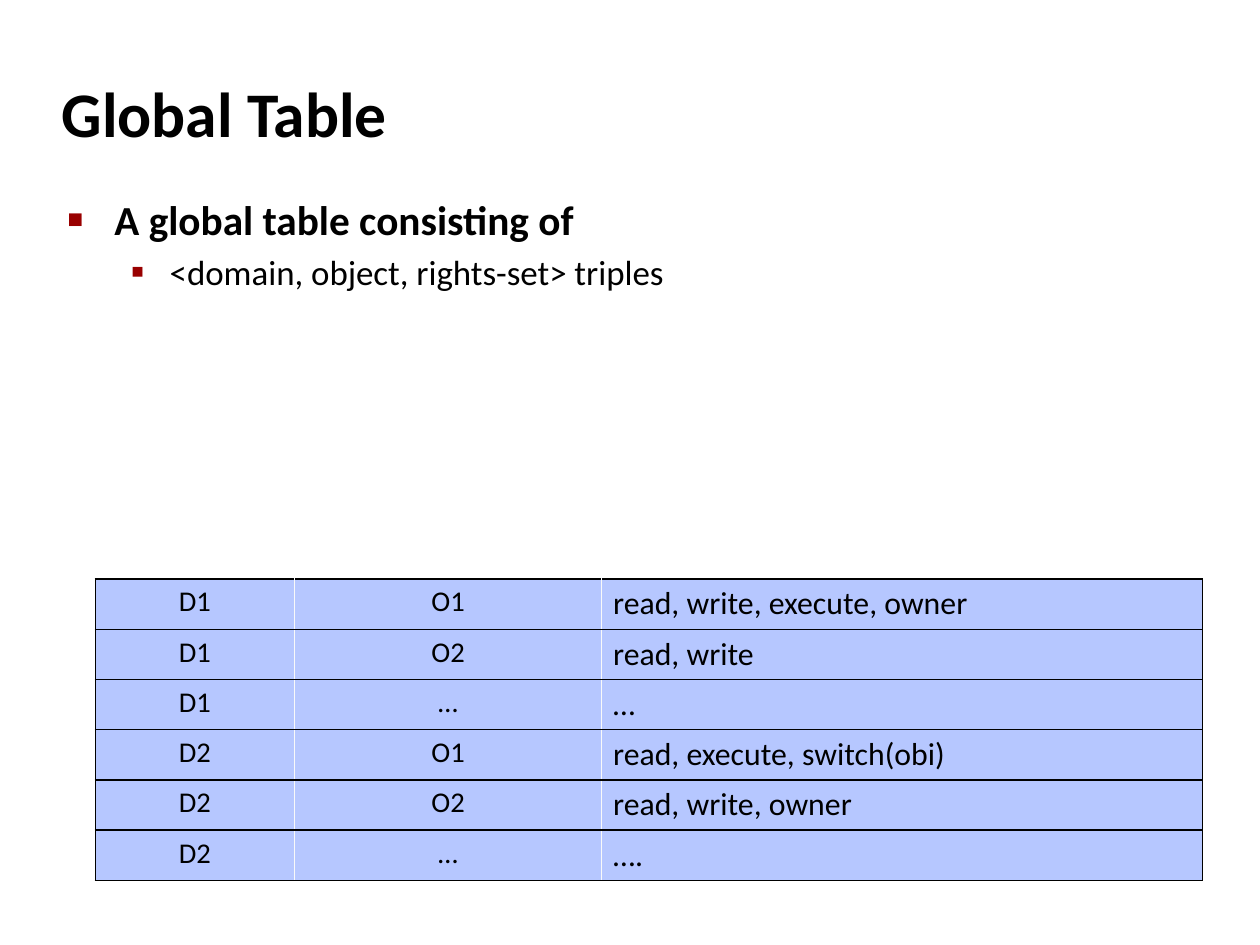
from dataclasses import dataclass

from lxml.etree import SubElement
from pptx import Presentation
from pptx.dml.color import RGBColor
from pptx.enum.text import MSO_ANCHOR as Anchor, PP_ALIGN as Align
from pptx.oxml.ns import qn
from pptx.util import Pt

FONT = "Calibri"
BLACK = RGBColor(0x00, 0x00, 0x00)
BULLET_RED = RGBColor(0x99, 0x00, 0x00)
CELL_BLUE = RGBColor(0xB6, 0xC7, 0xFF)
DIVIDER = RGBColor(0xF9, 0xF9, 0xF9)


@dataclass
class Bullet:
    text: str
    level: int
    size: float
    bold: bool
    symbol: str
    symbol_percent: int
    indent: float
    hanging: float


BULLETS = [
    Bullet("A global table consisting of", 0, 26, True, "■", 40, 29.5, 29.5),
    Bullet("<domain, object, rights-set> triples", 1, 22, False, "▪", 110, 64.3, 24.5),
]

COLUMN_WIDTHS = [125.5, 193.5, 378.5]
ROW_HEIGHT = 31.66
RIGHTS = [
    ("D1", "O1", "read, write, execute, owner"),
    ("D1", "O2", "read, write"),
    ("D1", "…", "…"),
    ("D2", "O1", "read, execute, switch(obi)"),
    ("D2", "O2", "read, write, owner"),
    ("D2", "…", "…."),
]


def add_run(paragraph, text: str, size: float, bold: bool = False) -> None:
    run = paragraph.add_run()
    run.text = text
    run.font.name = FONT
    run.font.size = Pt(size)
    run.font.bold = bold
    run.font.color.rgb = BLACK


def add_text_frame(slide, left: float, top: float, width: float, height: float,
                   anchor: Anchor):
    shape = slide.shapes.add_textbox(Pt(left), Pt(top), Pt(width), Pt(height))
    frame = shape.text_frame
    frame.word_wrap = True
    frame.vertical_anchor = anchor
    frame.margin_left = frame.margin_right = Pt(8)
    frame.margin_top = frame.margin_bottom = Pt(4)
    return frame


def add_bullet(paragraph, bullet: Bullet) -> None:
    paragraph.level = bullet.level
    paragraph.space_before = Pt(bullet.size * 0.2)
    properties = paragraph._p.get_or_add_pPr()
    properties.set("marL", str(Pt(bullet.indent)))
    properties.set("indent", str(-Pt(bullet.hanging)))
    color = SubElement(properties, qn("a:buClr"))
    SubElement(color, qn("a:srgbClr"), val=str(BULLET_RED))
    SubElement(properties, qn("a:buSzPct"), val=str(bullet.symbol_percent * 1000))
    SubElement(properties, qn("a:buFont"), typeface=FONT)
    SubElement(properties, qn("a:buChar"), char=bullet.symbol)
    add_run(paragraph, bullet.text, bullet.size, bullet.bold)


def add_border(cell, side: str, color: RGBColor, width: float) -> None:
    line = SubElement(cell._tc.get_or_add_tcPr(), qn(f"a:ln{side}"), w=str(Pt(width)))
    fill = SubElement(line, qn("a:solidFill"))
    SubElement(fill, qn("a:srgbClr"), val=str(color))


def fill_cell(cell, text: str, column: int) -> None:
    last = len(COLUMN_WIDTHS) - 1
    outer, inner = (BLACK, 1), (DIVIDER, 0.75)
    # Borders come before the fill in the cell properties
    add_border(cell, "L", *(outer if column == 0 else inner))
    add_border(cell, "R", *(outer if column == last else inner))
    add_border(cell, "T", *outer)
    add_border(cell, "B", *outer)
    cell.fill.solid()
    cell.fill.fore_color.rgb = CELL_BLUE
    paragraph = cell.text_frame.paragraphs[0]
    paragraph.alignment = Align.LEFT if column == last else Align.CENTER
    add_run(paragraph, text, 20 if column == last else 18)


def add_rights_table(slide) -> None:
    frame = slide.shapes.add_table(
        len(RIGHTS), len(COLUMN_WIDTHS), Pt(60), Pt(364.7),
        Pt(sum(COLUMN_WIDTHS)), Pt(ROW_HEIGHT * len(RIGHTS)))
    table = frame.table
    table.first_row = table.horz_banding = False
    for column, width in zip(table.columns, COLUMN_WIDTHS):
        column.width = Pt(width)
    for row_index, texts in enumerate(RIGHTS):
        table.rows[row_index].height = Pt(ROW_HEIGHT)
        for column_index, text in enumerate(texts):
            fill_cell(table.cell(row_index, column_index), text, column_index)


def main() -> None:
    presentation = Presentation()
    presentation.slide_width = Pt(793.7)
    presentation.slide_height = Pt(595.28)
    slide = presentation.slides.add_slide(presentation.slide_layouts[6])

    # Title
    title = add_text_frame(slide, 31, 37.8, 658.8, 66.2, Anchor.MIDDLE)
    add_run(title.paragraphs[0], "Global Table", 40, True)

    # Bullets
    body = add_text_frame(slide, 34.6, 118.1, 685.4, 216, Anchor.TOP)
    for index, bullet in enumerate(BULLETS):
        add_bullet(body.add_paragraph() if index else body.paragraphs[0], bullet)

    # Table of domains, objects and rights
    add_rights_table(slide)

    presentation.save("out.pptx")


if __name__ == "__main__":
    main()
